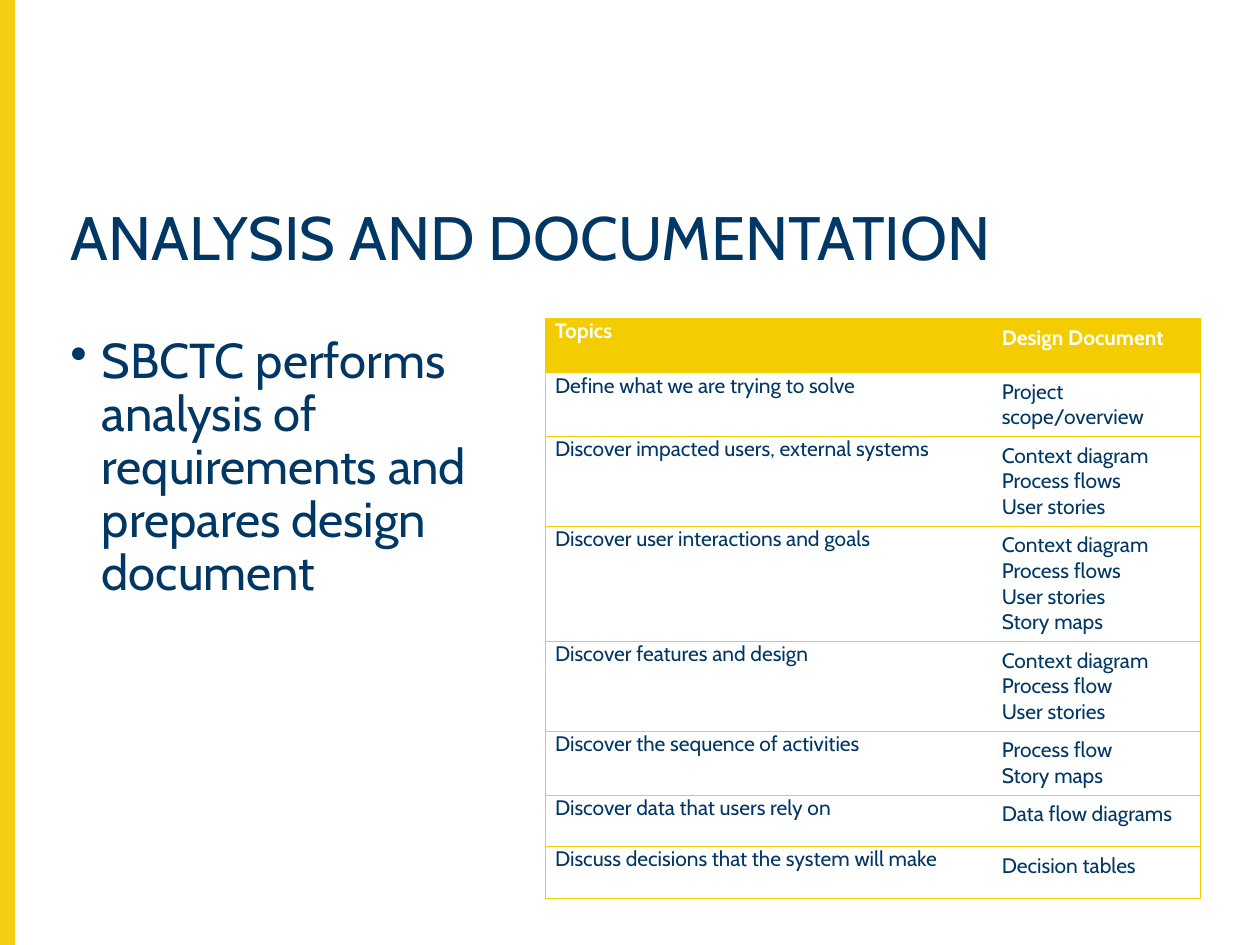
from typing import NamedTuple

from lxml import etree
from pptx import Presentation
from pptx.dml.color import RGBColor
from pptx.enum.shapes import MSO_SHAPE
from pptx.enum.text import MSO_ANCHOR, MSO_AUTO_SIZE, PP_ALIGN
from pptx.oxml.ns import qn
from pptx.util import Inches, Pt

RECTANGLE = MSO_SHAPE.RECTANGLE
TOP = MSO_ANCHOR.TOP
LEFT = PP_ALIGN.LEFT
NO_FIT = MSO_AUTO_SIZE.NONE

PAGE_WIDTH, PAGE_HEIGHT = Inches(10), Inches(7.5)
TITLE_ONLY = 5
FONT = "Cabin"
COLORS = {"navy": "003764", "gold": "F4CD00", "bar": "F4CE12", "white": "FFFFFF"}
HEADER_HEIGHT, ROW_HEIGHT = Inches(0.43), Inches(0.41)
COLUMN_SHARES = (0.68, 0.32)
BORDER_WIDTH = Pt(0.5)
CELL_MARGINS = (
    {"margin_left": 0.08, "margin_right": 0.08, "margin_top": 0, "margin_bottom": 0},
    {"margin_left": 0.09, "margin_right": 0.09, "margin_top": 0.05, "margin_bottom": 0.05},
)


class Area(NamedTuple):
    """A rectangle in shares of the page size."""
    left: float
    top: float
    width: float
    height: float

    def lengths(self) -> tuple[int, ...]:
        sizes = (PAGE_WIDTH, PAGE_HEIGHT) * 2
        return tuple(round(share * size) for share, size in zip(self, sizes))


class Topic(NamedTuple):
    name: str
    documents: tuple[str, ...]


BAR = Area(0, 0, 0.011, 1)
TITLE = Area(0.046, 0.2133, 0.933, 0.1053)
BODY = Area(0.046, 0.3493, 0.372, 0.5787)
TABLE = Area(0.4325, 0.337, 0.52, 0.6053)

HEADER = Topic("Topics", ("Design Document",))
TOPICS = (
    Topic("Define what we are trying to solve", ("Project scope/overview",)),
    Topic("Discover impacted users, external systems",
          ("Context diagram", "Process flows", "User stories")),
    Topic("Discover user interactions and goals",
          ("Context diagram", "Process flows", "User stories", "Story maps")),
    Topic("Discover features and design",
          ("Context diagram", "Process flow", "User stories")),
    Topic("Discover the sequence of activities", ("Process flow", "Story maps")),
    Topic("Discover data that users rely on", ("Data flow diagrams",)),
    Topic("Discuss decisions that the system will make", ("Decision tables",)),
)


def color(name: str) -> RGBColor:
    return RGBColor.from_string(COLORS[name])


def set_text(frame, lines, size, color_name="navy", bold=False, spacing=1.0) -> None:
    frame.text = "\n".join(lines)
    for para in frame.paragraphs:
        para.alignment = LEFT
        para.line_spacing = spacing
        for span in para.runs:
            for key, value in {"name": FONT, "size": Pt(size), "bold": bold}.items():
                setattr(span.font, key, value)
            span.font.color.rgb = color(color_name)


def set_frame(frame) -> None:
    for key, value in {"word_wrap": True, "auto_size": NO_FIT, "vertical_anchor": TOP}.items():
        setattr(frame, key, value)


def add_bar(page) -> None:
    bar = page.shapes.add_shape(RECTANGLE, *BAR.lengths())
    bar.shadow.inherit = False
    bar.fill.solid()
    bar.fill.fore_color.rgb = color("bar")
    bar.line.color.rgb = color("bar")
    bar.line.width = Pt(1)


def add_title(page, text: str) -> None:
    title = page.shapes.title
    title.left, title.top, title.width, title.height = TITLE.lengths()
    set_frame(title.text_frame)
    set_text(title.text_frame, [text], 35, spacing=0.9)


def add_body(page, text: str) -> None:
    frame = page.shapes.add_textbox(*BODY.lengths()).text_frame
    set_frame(frame)
    set_text(frame, [text], 28, spacing=0.9)
    for para in frame.paragraphs:
        properties = para._p.get_or_add_pPr()
        properties.set("marL", str(Inches(0.25)))
        properties.set("indent", str(-Inches(0.25)))
        etree.SubElement(properties, qn("a:buChar"), char="•")


def set_borders(cell, column: int) -> None:
    """Frame each row in gold, without a line between the columns."""
    properties = cell._tc.get_or_add_tcPr()
    inner = "R" if column == 0 else "L"
    for side in "LRTB":
        line = etree.SubElement(properties, qn(f"a:ln{side}"), w=str(BORDER_WIDTH))
        if side == inner:
            etree.SubElement(line, qn("a:noFill"))
        else:
            fill = etree.SubElement(line, qn("a:solidFill"))
            etree.SubElement(fill, qn("a:srgbClr"), val=COLORS["gold"])


def fill_cell(cell, column: int, lines, is_header: bool) -> None:
    set_borders(cell, column)
    for key, value in CELL_MARGINS[column].items():
        setattr(cell, key, Inches(value))
    cell.vertical_anchor = TOP
    cell.fill.solid()
    cell.fill.fore_color.rgb = color("gold" if is_header else "white")
    set_text(cell.text_frame, lines, 12, "white" if is_header else "navy", is_header)


def add_topic_table(page) -> None:
    rows = (HEADER, *TOPICS)
    area = TABLE.lengths()
    table = page.shapes.add_table(len(rows), len(COLUMN_SHARES), *area).table
    table.horz_banding = False
    for column, share in zip(table.columns, COLUMN_SHARES):
        column.width = round(area[2] * share)
    for index, topic in enumerate(rows):
        is_header = index == 0
        table.rows[index].height = HEADER_HEIGHT if is_header else ROW_HEIGHT
        for column, lines in enumerate(([topic.name], topic.documents)):
            fill_cell(table.cell(index, column), column, lines, is_header)


def main() -> None:
    deck = Presentation()
    deck.slide_width, deck.slide_height = PAGE_WIDTH, PAGE_HEIGHT
    page = deck.slides.add_slide(deck.slide_layouts[TITLE_ONLY])
    add_bar(page)
    add_title(page, "ANALYSIS AND DOCUMENTATION")
    add_body(page, "SBCTC performs analysis of requirements and prepares design document")
    add_topic_table(page)
    deck.save("out.pptx")


if __name__ == "__main__":
    main()
